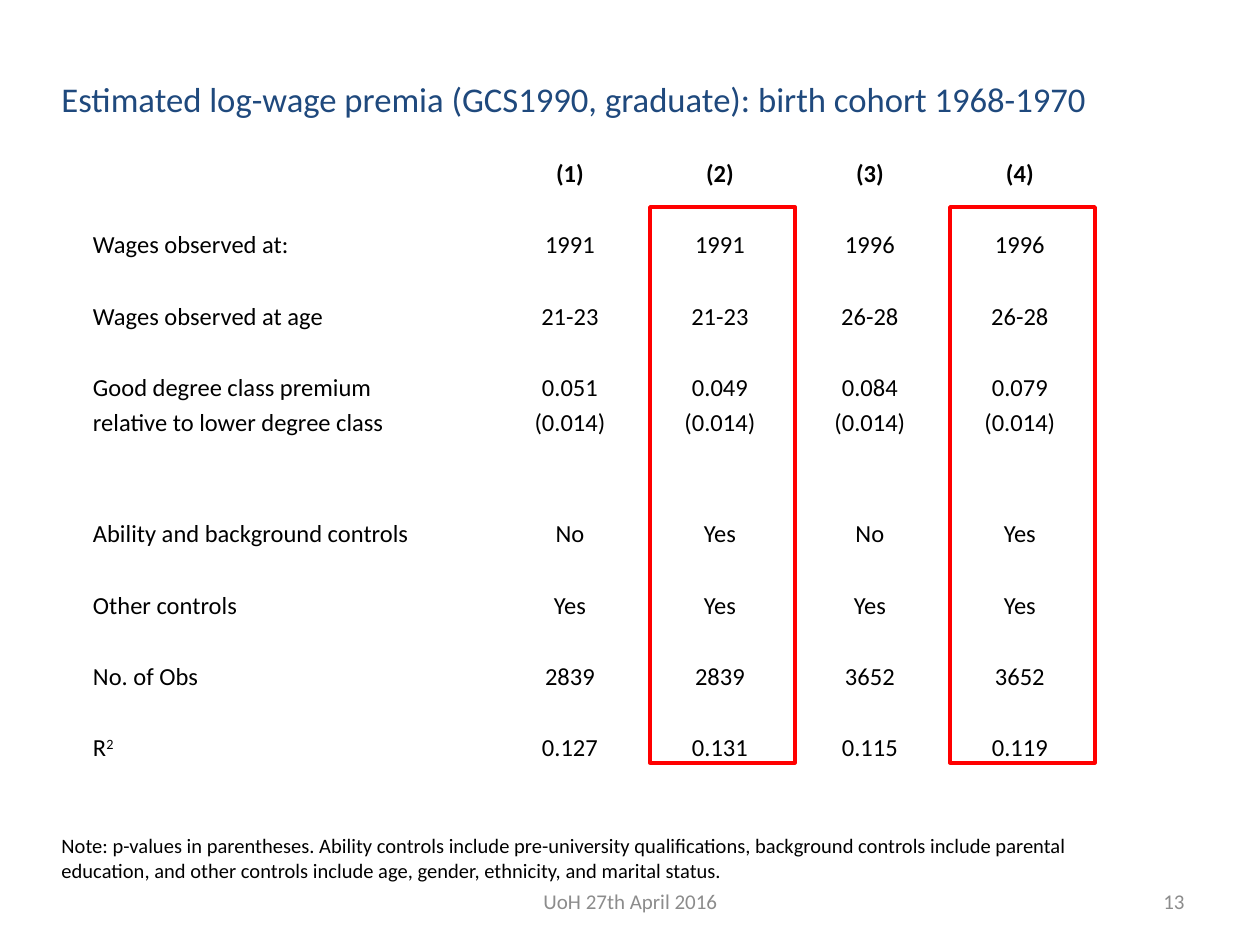
"""Build the slide of estimated log-wage premia for the 1968-1970 birth cohort."""
from pptx import Presentation
from pptx import util as u
from pptx.dml.color import RGBColor
from pptx.enum import shapes, text

PX = 914400 / 126
FONT = "Calibri"
BLACK = RGBColor(0, 0, 0)
WHITE = RGBColor(255, 255, 255)
NAVY = RGBColor(0x1F, 0x49, 0x7D)
GREY = RGBColor(0x8C, 0x8C, 0x8C)
RED = RGBColor(255, 0, 0)
LEFT, CENTER, RIGHT = text.PP_ALIGN.LEFT, text.PP_ALIGN.CENTER, text.PP_ALIGN.RIGHT
JUSTIFY = text.PP_ALIGN.JUSTIFY


def px(*lengths):
    return [u.Emu(round(length * PX)) for length in lengths]


def add_run(para, words, size, color, bold=False):
    span = para.add_run()
    span.text = words
    span.font.name = FONT
    span.font.size = u.Pt(size)
    span.font.color.rgb = color
    span.font.bold = bold
    return span


deck = Presentation()
deck.slide_width, deck.slide_height = px(1260, 945)
page = deck.slides.add_slide(deck.slide_layouts[6])

TITLE = "Estimated log-wage premia (GCS1990, graduate): birth cohort 1968-1970"
NOTE = (
    "Note: p-values in parentheses. Ability controls include pre-university "
    "qualifications, background controls include parental education, and other "
    "controls include age, gender, ethnicity, and marital status."
)
captions = [
    ((49, 74, 1101, 50), TITLE, 19.8, NAVY, LEFT),
    ((49, 828, 1101, 60), NOTE, 11.7, BLACK, LEFT),
    ((431, 876, 399, 50), "UoH 27th April 2016", 12, GREY, CENTER),
    ((903, 876, 294, 50), "13", 12, GREY, RIGHT),
]
for place, words, size, color, align in captions:
    box = page.shapes.add_textbox(*px(*place))
    box.text_frame.word_wrap = True
    box.text_frame.vertical_anchor = text.MSO_ANCHOR.MIDDLE
    para = box.text_frame.paragraphs[0]
    para.alignment = align
    add_run(para, words, size, color)

rows = [
    ["", "(1)", "(2)", "(3)", "(4)"],
    ["Wages observed at:", "1991", "1991", "1996", "1996"],
    ["Wages observed at age", "21-23", "21-23", "26-28", "26-28"],
    ["Good degree class premium\nrelative to lower degree class",
     "0.051\n(0.014)", "0.049\n(0.014)", "0.084\n(0.014)", "0.079\n(0.014)"],
    ["Ability and background controls", "No", "Yes", "No", "Yes"],
    ["Other controls", "Yes", "Yes", "Yes", "Yes"],
    ["No. of Obs", "2839", "2839", "3652", "3652"],
    ["R", "0.127", "0.131", "0.115", "0.119"],
]
widths = [411, 150, 150, 150, 150]
heights = [71, 72, 71, 146, 72, 71, 71, 71]
table = page.shapes.add_table(
    len(rows), len(widths), *px(84, 155, sum(widths), sum(heights))
).table
table.first_row = False
table.horz_banding = False
for column, width in zip(table.columns, px(*widths)):
    column.width = width
for line, height in zip(table.rows, px(*heights)):
    line.height = height

for row, values in enumerate(rows):
    for col, value in enumerate(values):
        cell = table.cell(row, col)
        cell.fill.solid()
        cell.fill.fore_color.rgb = WHITE
        cell.margin_left, cell.margin_right = px(9, 9)
        cell.margin_top = cell.margin_bottom = 0
        for index, words in enumerate(value.split("\n")):
            frame = cell.text_frame
            para = frame.add_paragraph() if index else frame.paragraphs[0]
            para.alignment = CENTER if col else JUSTIFY
            para.line_spacing = 1.15
            if words:
                add_run(para, words, 14, BLACK, bold=row == 0)

label = table.cell(len(rows) - 1, 0).text_frame.paragraphs[0]
exponent = add_run(label, "2", 14, BLACK)
exponent.font._element.set("baseline", "30000")

for left in (650, 950):
    highlight = page.shapes.add_shape(
        shapes.MSO_SHAPE.RECTANGLE, *px(left, 207, 145, 556)
    )
    highlight.shadow.inherit = False
    highlight.fill.background()
    highlight.line.color.rgb = RED
    highlight.line.width = u.Pt(2)

deck.save("out.pptx")
